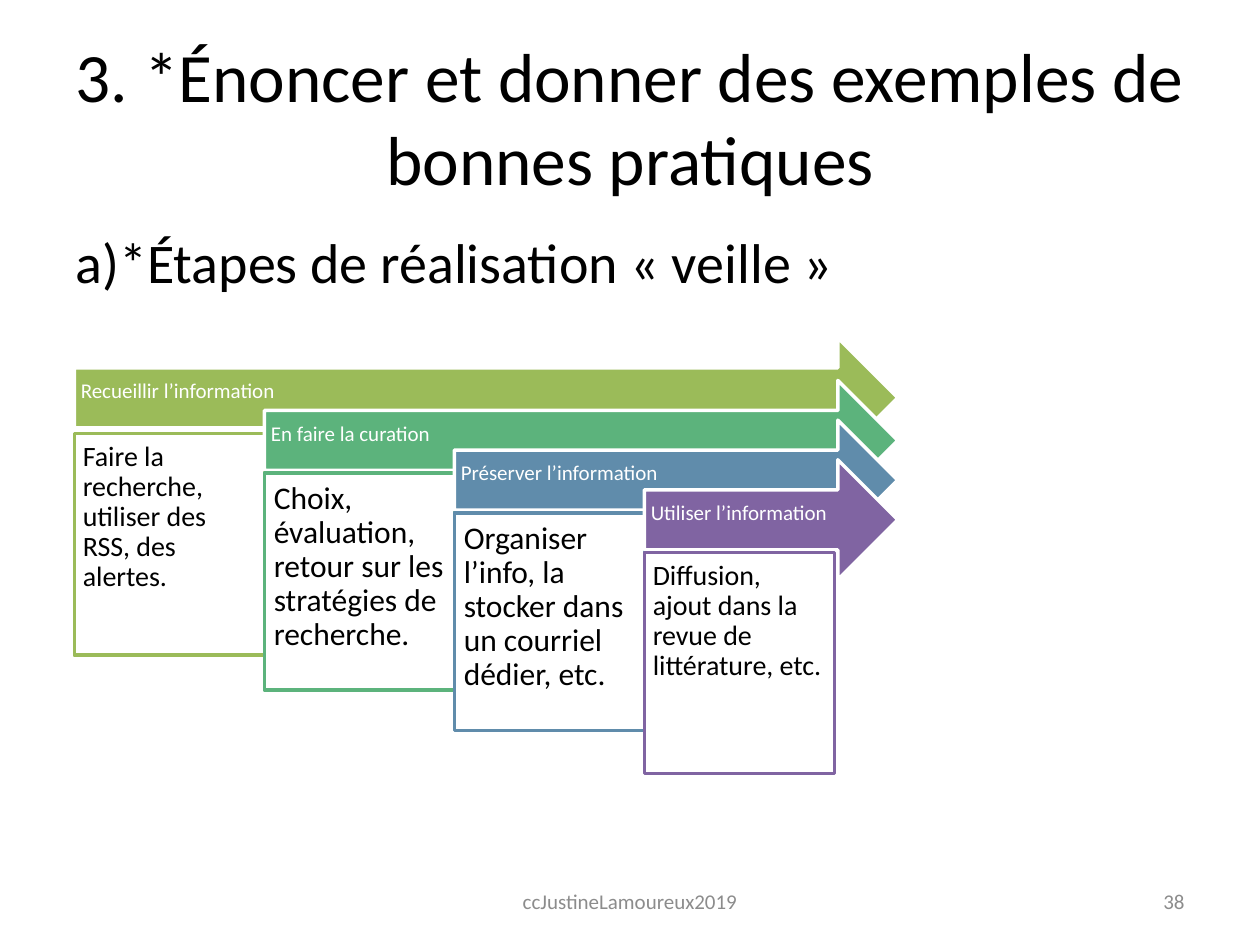
from pptx import Presentation
from pptx.dml.color import RGBColor
from pptx.enum.shapes import MSO_SHAPE
from pptx.enum.text import MSO_ANCHOR, MSO_AUTO_SIZE, PP_ALIGN
from pptx.util import Cm, Pt

STAGES = [
    ("Recueillir l’information", "Faire la recherche, utiliser des RSS, des alertes.", 16, "9BBB59", 1.93, 4.47),
    ("En faire la curation", "Choix, évaluation, retour sur les stratégies de recherche.", 18, "5CB37C", 1.87, 4.37),
    ("Préserver l’information", "Organiser l’info, la stocker dans un courriel dédier, etc.", 18, "608CAB", 1.87, 4.39),
    ("Utiliser l’information", "Diffusion, ajout dans la revue de littérature, etc.", 16, "8064A2", 1.87, 4.45),
]


def color(value):
    return RGBColor.from_string(value)


def write(shape, text, size, ink, align=PP_ALIGN.LEFT, anchor=MSO_ANCHOR.MIDDLE,
          insets=(0.25, 0.13, 0.25, 0.13), spacing=1.0, before=0):
    frame = shape.text_frame
    frame.text = text
    paragraph = frame.paragraphs[0]
    left, top, right, bottom = insets
    formats = [
        (frame, {"word_wrap": True, "auto_size": MSO_AUTO_SIZE.NONE,
                 "vertical_anchor": anchor,
                 "margin_left": Cm(left), "margin_top": Cm(top),
                 "margin_right": Cm(right), "margin_bottom": Cm(bottom)}),
        (paragraph, {"alignment": align, "line_spacing": spacing,
                     "space_before": Pt(before)}),
        (paragraph.runs[0].font, {"name": "Calibri", "size": Pt(size)}),
    ]
    for target, values in formats:
        for name, value in values.items():
            setattr(target, name, value)
    paragraph.runs[0].font.color.rgb = color(ink)


def add_title(slide, text, left, top, width, height):
    title = slide.shapes.title
    for name, value in {"left": left, "top": top, "width": width, "height": height}.items():
        setattr(title, name, Cm(value))
    write(title, text, 39.6, "000000", PP_ALIGN.CENTER)


def add_label(slide, text, left, top, width, height, size, ink, **layout):
    label = slide.shapes.add_textbox(Cm(left), Cm(top), Cm(width), Cm(height))
    write(label, text, size, ink, **layout)


def add_panel(slide, kind, left, top, width, height, fill, line):
    shape = slide.shapes.add_shape(kind, Cm(left), Cm(top), Cm(width), Cm(height))
    shape.shadow.inherit = False
    shape.fill.solid()
    shape.fill.fore_color.rgb = color(fill)
    shape.line.color.rgb = color(line)
    shape.line.width = Pt(2)
    return shape


def add_stages(slide, left, top, width):
    step_x, step_y, arrow_height = 3.83, 0.8, 2.42
    for index, (heading, detail, size, accent, lift, height) in enumerate(STAGES):
        x = left + index * step_x
        y = top + index * step_y
        arrow = add_panel(slide, MSO_SHAPE.RIGHT_ARROW, x, y - lift,
                          width - index * step_x, arrow_height, accent, "FFFFFF")
        write(arrow, heading, 12, "FFFFFF", insets=(0.13, 0.13, 0.7, 0.38), spacing=0.9)
        box = add_panel(slide, MSO_SHAPE.RECTANGLE, x, y, step_x, height, "FFFFFF", accent)
        inset = 0.17 if size == 16 else 0.19
        write(box, detail, size, "000000", anchor=MSO_ANCHOR.TOP,
              insets=(inset,) * 4, spacing=0.9)


def main():
    presentation = Presentation()
    presentation.slide_width = Cm(25.4)
    presentation.slide_height = Cm(19.05)
    slide = presentation.slides.add_slide(presentation.slide_layouts[5])
    add_title(slide, "3. *Énoncer et donner des exemples de bonnes pratiques",
              1.27, 0.76, 22.86, 3.18)
    add_label(slide, "a)*Étapes de réalisation « veille »", 1.27, 4.45, 22.86, 1.8,
              32, "000000", anchor=MSO_ANCHOR.TOP, before=6.4)
    add_stages(slide, 1.5, 8.74, 16.6)
    add_label(slide, "ccJustineLamoureux2019", 8.68, 17.66, 8.04, 1.01,
              12, "8C8C8C", align=PP_ALIGN.CENTER)
    add_label(slide, "38", 18.2, 17.66, 5.93, 1.01, 12, "8C8C8C", align=PP_ALIGN.RIGHT)
    presentation.save("out.pptx")


if __name__ == "__main__":
    main()
